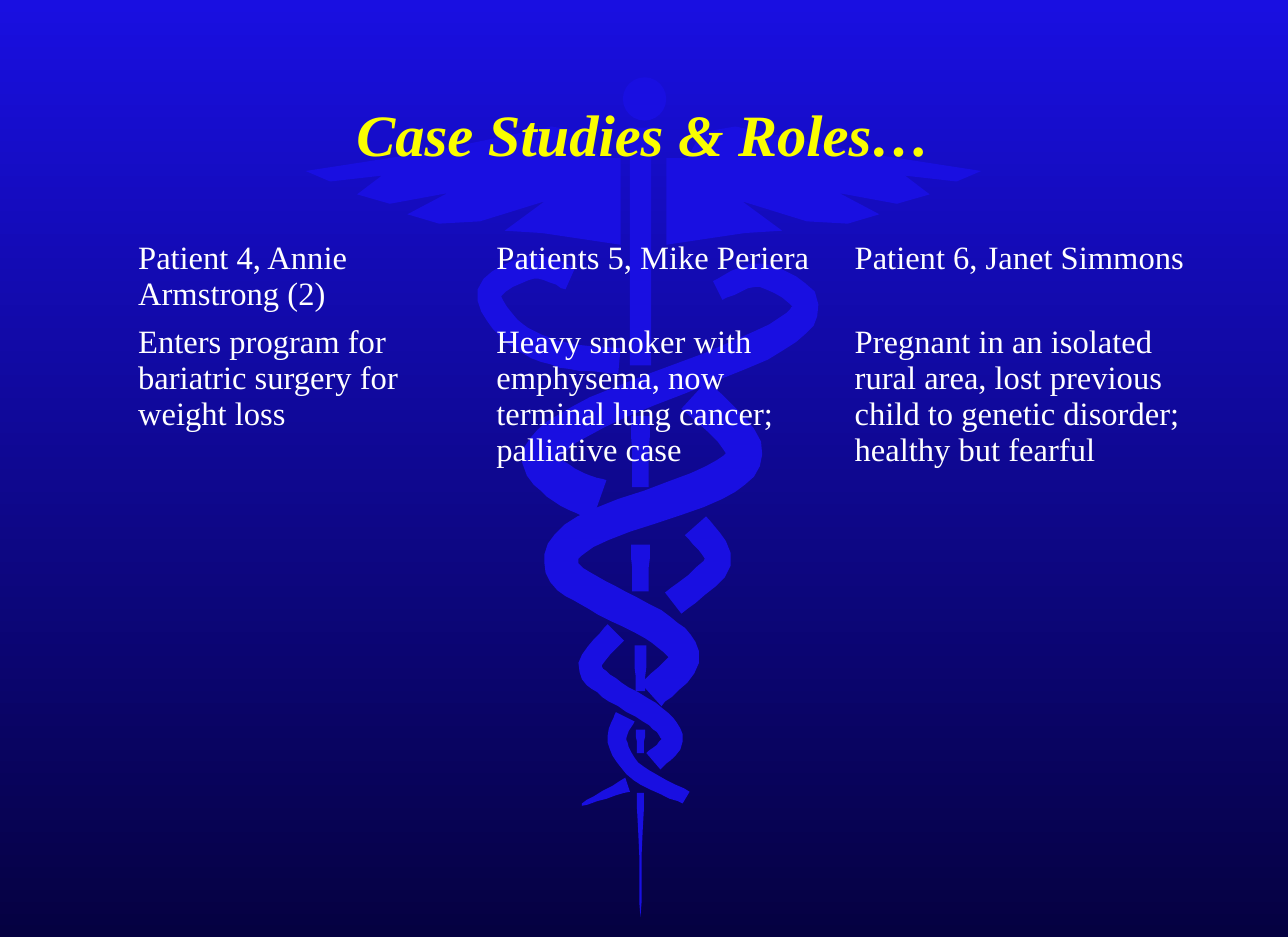
"""Build the case studies slide: a title and a patient table over a winged staff."""
from math import hypot

from pptx import Presentation
from pptx.dml.color import RGBColor
from pptx.enum.shapes import MSO_SHAPE
from pptx.enum.text import MSO_ANCHOR, PP_ALIGN
from pptx.util import Pt

PX = 9144
WIDTH, HEIGHT = 1100, 800
BLUE = RGBColor(0x19, 0x0F, 0xE1)
NAVY = RGBColor(0x05, 0x01, 0x41)
YELLOW = RGBColor(0xFA, 0xFD, 0x00)
WHITE = RGBColor(0xFF, 0xFF, 0xFF)
NO_GRID_STYLE = "{2D5ABB26-0587-4C30-8999-92F81FD0307C}"

ROD_X = 547
ROD_PIECES = [(109, 312, 9, 9), (355, 416, 8, 7), (465, 505, 8, 7),
              (551, 590, 5, 4), (623, 643, 4, 3), (677, 783, 3, 0)]
SNAKES = [
    (9, 18, [(613, 248), (650, 235), (688, 261), (650, 295), (510, 352),
             (462, 388), (482, 414), (512, 427)]),
    (10, 11, [(487, 238), (455, 228), (418, 250), (440, 285), (480, 303), (529, 308)]),
    (16, 13, [(593, 337), (635, 382), (610, 412), (500, 454), (480, 485),
              (510, 508), (565, 538), (584, 563), (556, 593)]),
    (12, 11, [(594, 449), (613, 480), (575, 515)]),
    (10, 9, [(526, 540), (504, 568), (520, 587), (560, 612), (574, 632), (558, 650)]),
    (9, 6, [(534, 612), (527, 633), (545, 660), (586, 681)]),
    (6, 1, [(536, 670), (497, 687)]),
]
LEFT_WING = [
    (530, 209), (463, 199), (431, 197), (465, 172), (410, 189), (375, 191),
    (348, 183), (382, 165), (333, 174), (305, 166), (326, 150), (282, 155),
    (261, 146), (365, 130), (471, 108), (500, 113), (512, 135), (530, 135),
]
RIGHT_WING = [(WIDTH - 1 - x, y) for x, y in LEFT_WING]

PATIENTS = [
    ["Patient 4, Annie Armstrong (2)", "Patients 5, Mike Periera", "Patient 6, Janet Simmons"],
    ["Enters program for bariatric surgery for weight loss",
     "Heavy smoker with emphysema, now terminal lung cancer; palliative case",
     "Pregnant in an isolated rural area, lost previous child to genetic disorder; "
     "healthy but fearful"],
]


def smooth(knots, steps=6):
    padded = [knots[0], *knots, knots[-1]]
    points = []
    for a, b, c, d in zip(padded, padded[1:], padded[2:], padded[3:]):
        for step in range(steps):
            t = step / steps
            points.append(tuple(
                q + t * ((r - p) + t * ((2 * p - 5 * q + 4 * r - s)
                                        + t * (3 * q - p - 3 * r + s))) / 2
                for p, q, r, s in zip(a, b, c, d)))
    return [*points, knots[-1]]


def ribbon(start, end, knots):
    points = smooth(knots)
    last = len(points) - 1
    left, right = [], []
    for index, (x, y) in enumerate(points):
        before, after = points[max(index - 1, 0)], points[min(index + 1, last)]
        dx, dy = after[0] - before[0], after[1] - before[1]
        reach = (start + (end - start) * index / last) / hypot(dx, dy)
        left.append((x - dy * reach, y + dx * reach))
        right.append((x + dy * reach, y - dx * reach))
    return left + right[::-1]


class SlideBuilder:
    font_name = "Times New Roman"

    def __init__(self, slide):
        self.slide = slide

    def background(self, top, bottom):
        fill = self.slide.background.fill
        fill.gradient()
        fill.gradient_angle = 270
        for stop, color in zip(fill.gradient_stops, (top, bottom)):
            stop.color.rgb = color

    def format_text(self, text_frame, size, color, alignment, bold=False, italic=False):
        for paragraph in text_frame.paragraphs:
            paragraph.alignment = alignment
            for run in paragraph.runs:
                font = run.font
                font.name, font.size = self.font_name, Pt(size)
                font.bold, font.italic = bold, italic
                font.color.rgb = color

    def title(self, text, left, top, width, height):
        shape = self.slide.shapes.title
        shape.left, shape.top = left * PX, top * PX
        shape.width, shape.height = width * PX, height * PX
        shape.text_frame.text = text
        shape.text_frame.vertical_anchor = MSO_ANCHOR.MIDDLE
        self.format_text(shape.text_frame, 36, YELLOW, PP_ALIGN.CENTER, True, True)

    def paint(self, shape, color):
        shape.shadow.inherit = False
        shape.fill.solid()
        shape.fill.fore_color.rgb = color
        shape.line.fill.background()

    def emblem(self, outlines, knob, color):
        group = self.slide.shapes.add_group_shape()
        for start, *others in outlines:
            builder = group.shapes.build_freeform(*start, scale=PX)
            builder.add_line_segments(others, close=True)
            self.paint(builder.convert_to_shape(), color)
        lengths = [length * PX for length in knob]
        self.paint(group.shapes.add_shape(MSO_SHAPE.OVAL, *lengths), color)
        self.slide.shapes.title.element.addprevious(group.element)

    def table(self, rows, left, top, column_width, row_height):
        row_count, column_count = len(rows), len(rows[0])
        frame = self.slide.shapes.add_table(
            row_count, column_count, left * PX, top * PX,
            column_count * column_width * PX, row_count * row_height * PX)
        table = frame.table
        table.first_row = table.horz_banding = False
        for style in frame.element.iter("{*}tableStyleId"):
            style.text = NO_GRID_STYLE
        for row_index, row in enumerate(rows):
            for column_index, text in enumerate(row):
                cell = table.cell(row_index, column_index)
                cell.fill.background()
                cell.text_frame.text = text
                self.format_text(cell.text_frame, 20, WHITE, PP_ALIGN.LEFT)


def main():
    presentation = Presentation()
    presentation.slide_width, presentation.slide_height = WIDTH * PX, HEIGHT * PX
    title_only = presentation.slide_layouts[5]
    builder = SlideBuilder(presentation.slides.add_slide(title_only))
    builder.background(BLUE, NAVY)
    rod = [(start, end, [(ROD_X, top), (ROD_X, bottom)])
           for top, bottom, start, end in ROD_PIECES]
    ribbons = [ribbon(*piece) for piece in rod + SNAKES]
    builder.emblem([*ribbons, LEFT_WING, RIGHT_WING], (532, 66, 37, 37), BLUE)
    builder.title("Case Studies & Roles…", 134, 47, 831, 133)
    builder.table(PATIENTS, 108, 200, 306, 57)
    presentation.save("out.pptx")


if __name__ == "__main__":
    main()
